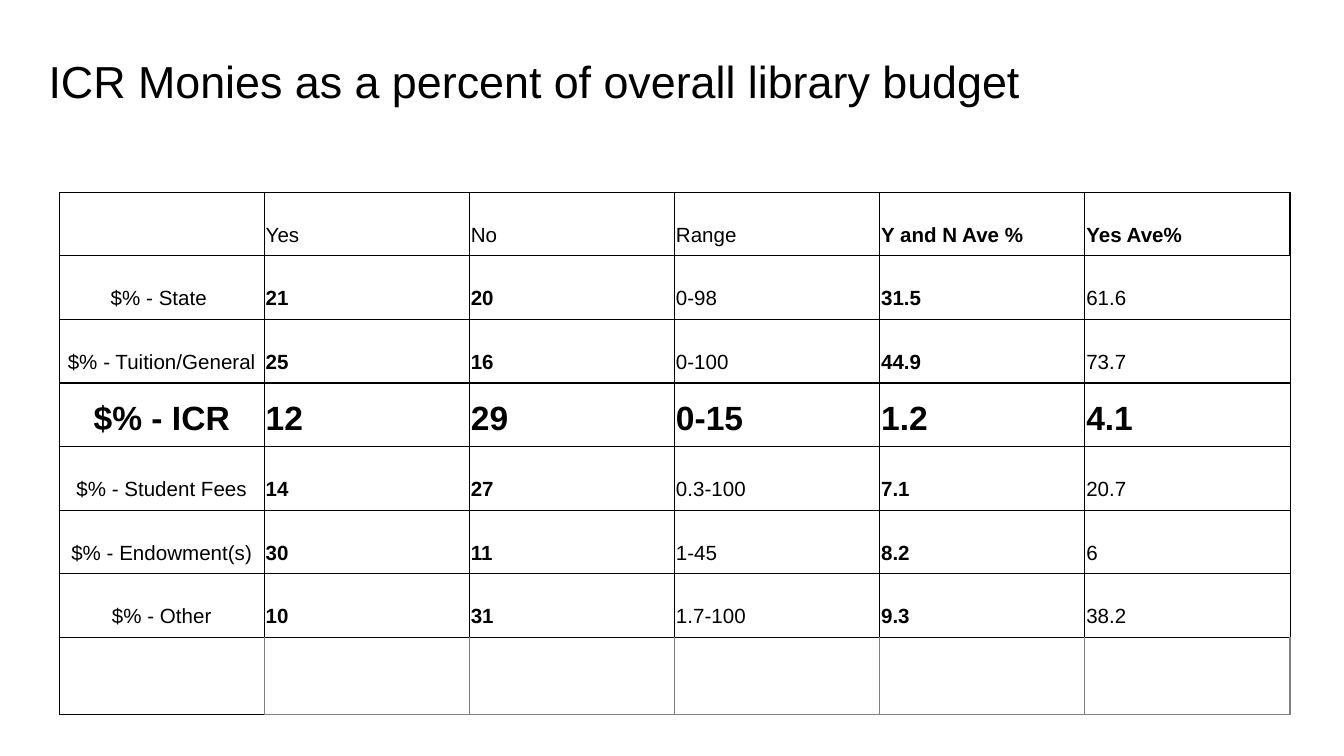
import lxml.etree
import pptx
import pptx.dml.color
import pptx.enum.text
import pptx.oxml.ns
import pptx.util

Pt = pptx.util.Pt
qn = pptx.oxml.ns.qn
COLORS = {"text": "000000", "line": "000000", "light_line": "808080", "paper": "FFFFFF"}
FONT = "Arial"
ROWS = [
    ["", "Yes", "No", "Range", "Y and N Ave %", "Yes Ave%"],
    ["$% - State ", "21", "20", "0-98", "31.5", "61.6"],
    ["$% - Tuition/General", "25", "16", "0-100", "44.9", "73.7"],
    ["$% - ICR", "12", "29", "0-15", "1.2", "4.1"],
    ["$% - Student Fees", "14", "27", "0.3-100", "7.1", "20.7"],
    ["$% - Endowment(s)", "30", "11", "1-45", "8.2", "6"],
    ["$% - Other", "10", "31", "1.7-100", "9.3", "38.2"],
    [""] * 6,
]
ICR_ROW = 3
LAST_ROW = len(ROWS) - 1
LAST_COLUMN = len(ROWS[0]) - 1
ROW_HEIGHT, LAST_ROW_HEIGHT = 34.1, 41.3


def rgb(name):
    """Return the named colour."""
    return pptx.dml.color.RGBColor.from_string(COLORS[name])


def style_paragraph(paragraph, size, bold=False):
    """Set the font and line spacing of a paragraph."""
    paragraph.line_spacing = 1.15
    paragraph.font.name = FONT
    paragraph.font.size = Pt(size)
    paragraph.font.bold = bold
    paragraph.font.color.rgb = rgb("text")


def add_title(slide, left, top, width, height):
    """Place the slide title in the given box."""
    shape = slide.shapes.add_textbox(Pt(left), Pt(top), Pt(width), Pt(height))
    frame = shape.text_frame
    frame.word_wrap = True
    frame.margin_left = frame.margin_right = Pt(7.2)
    frame.margin_top = frame.margin_bottom = Pt(7.2)
    paragraph = frame.paragraphs[0]
    paragraph.text = "ICR Monies as a percent of overall library budget"
    paragraph.space_after = Pt(16)
    style_paragraph(paragraph, 24)


def vertical_edge(row, edge):
    """Return colour and width of the vertical line at an edge of a row."""
    color = "light_line" if row == LAST_ROW and edge > 0 else "line"
    thin = 0 < row < LAST_ROW and edge in (1, LAST_COLUMN + 1)
    return color, 0.5 if thin else 0.75


def horizontal_edge(edge, column):
    """Return colour and width of the horizontal line at an edge of a column."""
    color = "light_line" if edge > LAST_ROW and column > 0 else "line"
    thin = column > 0 and edge in (1, LAST_ROW)
    return color, 0.5 if thin else 0.75


def set_borders(cell, row, column):
    """Draw the four borders of a cell."""
    borders = {
        "a:lnL": vertical_edge(row, column),
        "a:lnR": vertical_edge(row, column + 1),
        "a:lnT": horizontal_edge(row, column),
        "a:lnB": horizontal_edge(row + 1, column),
    }
    properties = cell._tc.get_or_add_tcPr()
    for index, (tag, (color, width)) in enumerate(borders.items()):
        line = lxml.etree.Element(qn(tag), w=str(Pt(width)))
        fill = lxml.etree.SubElement(line, qn("a:solidFill"))
        lxml.etree.SubElement(fill, qn("a:srgbClr"), val=COLORS[color])
        properties.insert(index, line)


def fill_cell(cell, text, row, column):
    """Write and style the text of a cell."""
    cell.vertical_anchor = pptx.enum.text.MSO_ANCHOR.BOTTOM
    cell.margin_left = cell.margin_right = cell.margin_top = Pt(0.75)
    cell.margin_bottom = Pt(5)
    paragraph = cell.text_frame.paragraphs[0]
    paragraph.text = text
    if column == 0:
        paragraph.alignment = pptx.enum.text.PP_ALIGN.CENTER
    bold_columns = (4, 5) if row == 0 else (1, 2, 4)
    bold = row == ICR_ROW or column in bold_columns
    style_paragraph(paragraph, 18 if row == ICR_ROW else 11, bold)


def add_budget_table(slide, left, top, width, height):
    """Place the budget table in the given box."""
    frame = slide.shapes.add_table(
        len(ROWS), len(ROWS[0]), Pt(left), Pt(top), Pt(width), Pt(height))
    table = frame.table
    table.first_row = table.horz_banding = False
    for column in table.columns:
        column.width = Pt(width / len(ROWS[0]))
    for row, texts in enumerate(ROWS):
        table.rows[row].height = Pt(LAST_ROW_HEIGHT if row == LAST_ROW else ROW_HEIGHT)
        for column, text in enumerate(texts):
            cell = table.cell(row, column)
            cell.fill.background()
            if text:
                fill_cell(cell, text, row, column)
            set_borders(cell, row, column)
    corner = table.cell(LAST_ROW, 0)
    corner.fill.solid()
    corner.fill.fore_color.rgb = rgb("paper")


def main():
    """Build and save the slide."""
    presentation = pptx.Presentation()
    presentation.slide_width = Pt(720)
    presentation.slide_height = Pt(405)
    slide = presentation.slides.add_slide(presentation.slide_layouts[6])
    slide.background.fill.solid()
    slide.background.fill.fore_color.rgb = rgb("paper")
    add_title(slide, 18.9, 17.5, 671, 45.4)
    add_budget_table(slide, 31.7, 103, 659.4, 280)
    presentation.save("out.pptx")


if __name__ == "__main__":
    main()
